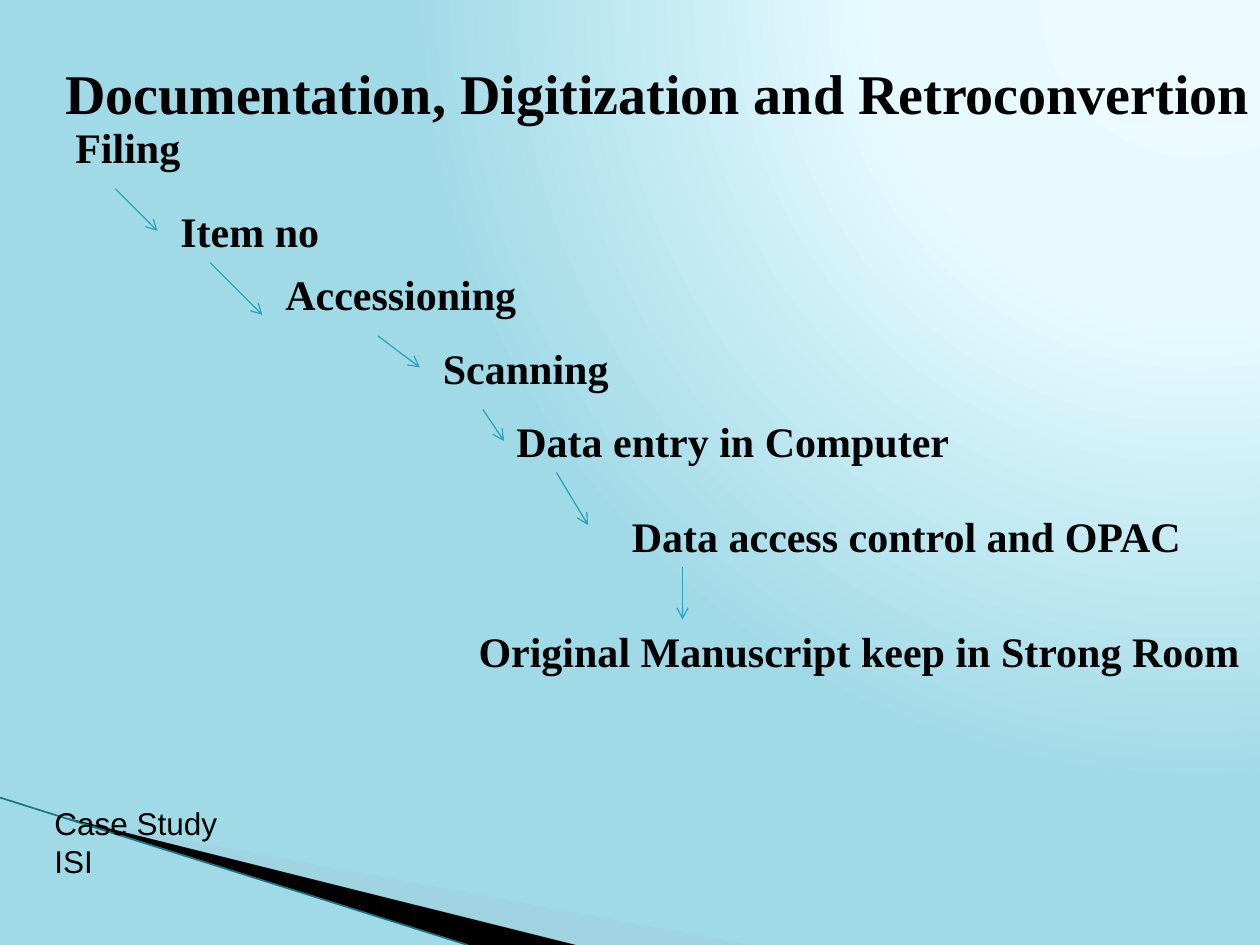
from dataclasses import dataclass

from lxml import etree
from pptx import Presentation
from pptx.dml.color import RGBColor
from pptx.enum.shapes import MSO_CONNECTOR
from pptx.enum.text import MSO_ANCHOR, MSO_AUTO_SIZE, PP_ALIGN
from pptx.oxml import parse_xml
from pptx.oxml.ns import nsdecls, qn
from pptx.util import Inches, Pt


@dataclass(frozen=True)
class Theme:
    heading_font: str = "Times New Roman"
    note_font: str = "Arial"
    title_size: int = 32
    step_size: int = 24
    note_size: int = 18
    ink: str = "000000"
    arrow: str = "2DA2BF"
    edge: str = "1A7488"
    wedge: str = "A0CBDC"
    glow: tuple = ((0, "EBFBFF"), (40, "E7FBFF"), (100, "A1DAE7"))


THEME = Theme()
CELLS_PER_INCH = 12  # the slide is a grid of 120 columns by 90 rows
STEP_ROWS = 6

# Text, column, row, width in columns
STEPS = [
    ("Filing", 6, 11, 13.5),
    ("Item no", 16, 19, 15.8),
    ("Accessioning", 26, 25, 25),
    ("Scanning", 41, 32, 18.6),
    ("Data entry in Computer", 48, 39, 44),
    ("Data access control and OPAC", 59, 48, 55.2),
    ("Original Manuscript keep in Strong Room", 44.4, 59, 75.6),
]

# Start column and row, end column and row
STEP_ARROWS = [
    (11, 18, 15, 22),
    (20, 25, 25, 30),
    (36, 32, 40, 35),
    (46, 39, 48, 42),
    (53, 45, 56, 50),
    (65, 54, 65, 59),
]


def cells(*counts):
    return [Inches(count / CELLS_PER_INCH) for count in counts]


def rgb(code):
    return RGBColor.from_string(code)


def paint_background(slide):
    """Fill the background with a glow centred beyond the top right corner."""
    stops = "".join(
        f'<a:gs pos="{share * 1000}"><a:srgbClr val="{code}"/></a:gs>'
        for share, code in THEME.glow
    )
    background = parse_xml(
        f'<p:bg {nsdecls("p", "a")}><p:bgPr><a:gradFill><a:gsLst>{stops}</a:gsLst>'
        '<a:path path="circle"><a:fillToRect l="95000" t="-106000" r="5000" b="206000"/>'
        "</a:path></a:gradFill><a:effectLst/></p:bgPr></p:bg>"
    )
    slide.element.cSld.insert(0, background)


def add_wedge(slide, corners, color, opacity=None):
    """Draw a closed outline through corners given in inches."""
    start, *others = [(Inches(x), Inches(y)) for x, y in corners]
    builder = slide.shapes.build_freeform(*start)
    builder.add_line_segments(others, close=True)
    wedge = builder.convert_to_shape()
    wedge.shadow.inherit = False
    wedge.line.fill.background()
    wedge.fill.solid()
    wedge.fill.fore_color.rgb = rgb(color)
    if opacity is not None:
        tint = wedge.fill._xPr.find(qn("a:solidFill"))[0]
        etree.SubElement(tint, qn("a:alpha"), val=str(opacity * 1000))


def add_line(slide, ends, color, width, arrow=False):
    line = slide.shapes.add_connector(MSO_CONNECTOR.STRAIGHT, *ends)
    line.line.color.rgb = rgb(color)
    line.line.width = Pt(width)
    if arrow:
        etree.SubElement(line.line._get_or_add_ln(), qn("a:tailEnd"), type="arrow")
    etree.SubElement(line._element.spPr, qn("a:effectLst"))


def write(holder, text, font_name, size, bold=False, wrap=False):
    frame = holder.text_frame
    frame.text = text
    frame.word_wrap = wrap
    frame.auto_size = MSO_AUTO_SIZE.SHAPE_TO_FIT_TEXT
    frame.vertical_anchor = MSO_ANCHOR.TOP
    paragraph = frame.paragraphs[0]
    paragraph.alignment = PP_ALIGN.LEFT
    font = paragraph.font
    font.name, font.size, font.bold = font_name, Pt(size), bold
    font.color.rgb = rgb(THEME.ink)


def add_title(slide, text):
    title = slide.shapes.title
    title.left, title.top, title.width, title.height = cells(5, 5, 116.3, 7.7)
    write(title, text, THEME.heading_font, THEME.title_size, bold=True)


def add_step(slide, text, column, row, columns):
    step = slide.shapes.add_textbox(*cells(column, row, columns, STEP_ROWS))
    write(step, text, THEME.heading_font, THEME.step_size, bold=True)


def add_note(slide, text):
    note = slide.shapes.add_textbox(*cells(4, 76, 20, 8))
    write(note, text, THEME.note_font, THEME.note_size, wrap=True)


def add_corner_decoration(slide):
    add_wedge(slide, [(0.55, 6.5), (5.95, 7.5), (4.56, 7.5)], THEME.wedge, opacity=40)
    add_wedge(slide, [(0.53, 6.49), (4.57, 7.5), (3.72, 7.5)], THEME.ink)
    edge = [Inches(length) for length in (0, 6.33, 3.71, 7.5)]
    add_line(slide, edge, THEME.edge, 0.95)


def main():
    deck = Presentation()
    deck.slide_width, deck.slide_height = Inches(10), Inches(7.5)
    slide = deck.slides.add_slide(deck.slide_layouts.get_by_name("Title Only"))
    paint_background(slide)
    add_corner_decoration(slide)
    add_title(slide, "Documentation, Digitization and Retroconvertion")
    for step in STEPS:
        add_step(slide, *step)
    for ends in STEP_ARROWS:
        add_line(slide, cells(*ends), THEME.arrow, 0.75, arrow=True)
    add_note(slide, "Case Study ISI")
    deck.save("out.pptx")


if __name__ == "__main__":
    main()
